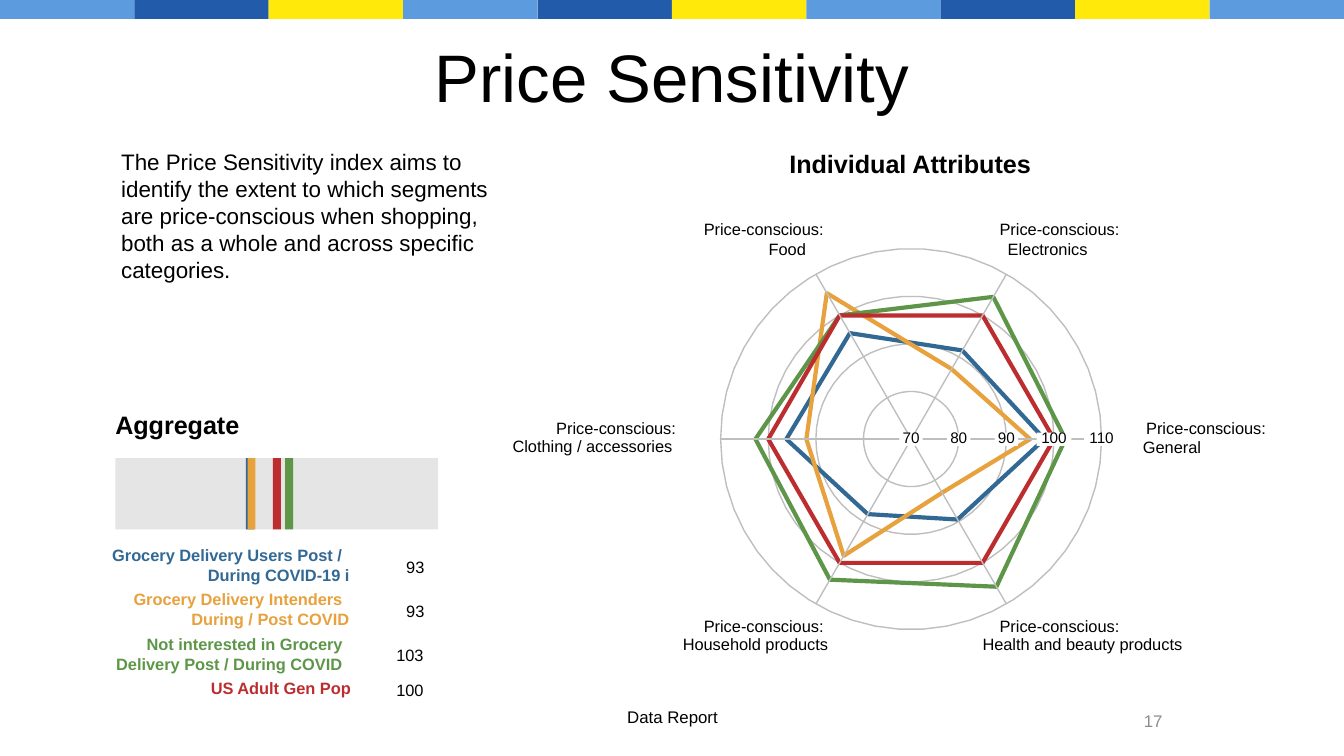
from dataclasses import dataclass
from math import cos, radians, sin

from lxml.etree import SubElement
from pptx import Presentation
from pptx.dml.color import RGBColor
from pptx.enum.shapes import MSO_CONNECTOR, MSO_SHAPE
from pptx.enum.text import MSO_ANCHOR, PP_ALIGN
from pptx.oxml.ns import qn
from pptx.util import Cm, Pt


@dataclass(frozen=True)
class Theme:
    font: str = "Arial"
    black: str = "000000"
    white: str = "FFFFFF"
    muted: str = "8C8C8C"
    grid: str = "BEBEBE"
    track: str = "E5E5E5"
    stripes: tuple = ("5B9BDE", "235BAB", "FFE90A")
    blue: str = "326994"
    orange: str = "E7A13D"
    green: str = "5D9648"
    red: str = "BC2D30"
    title: float = 36
    head: float = 13.5
    body: float = 12
    small: float = 9
    label: float = 8.8
    scale: float = 8.2


theme = Theme()
deck = Presentation()
deck.slide_width, deck.slide_height = Cm(25.4), Cm(14.29)
slide = deck.slides.add_slide(deck.slide_layouts[6])
shapes = slide.shapes


def write(text, x, y, w, h, size=theme.label, color=theme.black, bold=False,
          align=PP_ALIGN.LEFT, anchor=MSO_ANCHOR.TOP, lead=None, tight=False):
    """Add a text box; a tight one has no margins, no wrap and centered text."""
    frame = shapes.add_textbox(Cm(x), Cm(y), Cm(w), Cm(h)).text_frame
    frame.word_wrap = not tight
    if tight:
        frame.margin_left = frame.margin_right = 0
        frame.margin_top = frame.margin_bottom = 0
        align, anchor, lead = PP_ALIGN.CENTER, MSO_ANCHOR.MIDDLE, size
    frame.vertical_anchor = anchor
    line = frame.paragraphs[0]
    line.text = text
    line.alignment = align
    if lead:
        line.line_spacing = Pt(lead)
    font = line.runs[0].font
    font.name, font.size, font.bold = theme.font, Pt(size), bold
    font.color.rgb = RGBColor.from_string(color)


def block(x, y, w, h, color):
    """Add a plain filled rectangle."""
    shape = shapes.add_shape(MSO_SHAPE.RECTANGLE, Cm(x), Cm(y), Cm(w), Cm(h))
    shape.shadow.inherit = False
    shape.fill.solid()
    shape.fill.fore_color.rgb = RGBColor.from_string(color)
    shape.line.fill.background()


# Top band
for i in range(10):
    block(2.54 * i, 0, 2.54, 0.36, theme.stripes[i % 3])

# Headings and prose
write("Price Sensitivity", 1.27, 0.58, 22.86, 1.7, size=theme.title,
      align=PP_ALIGN.CENTER, anchor=MSO_ANCHOR.MIDDLE)
write("Aggregate", 1.93, 7.61, 3.94, 0.86, size=theme.head, bold=True)
write("The Price Sensitivity index aims to identify the extent to which segments "
      "are price-conscious when shopping, both as a whole and across specific "
      "categories.", 2.04, 2.68, 8.1, 3.96, size=theme.body, lead=14.4)
write("Data Report", 10.74, 13.24, 3.94, 0.64, size=theme.small,
      align=PP_ALIGN.CENTER)
write("Individual Attributes", 14.67, 2.68, 6.6, 1.42, size=theme.head, bold=True)
write("17", 18.97, 13.25, 3.25, 0.76, size=theme.small, color=theme.muted,
      align=PP_ALIGN.RIGHT, anchor=MSO_ANCHOR.MIDDLE)

# Segments: color, legend lines with widths, index, marker left,
# scores counterclockwise from General
groups = [
    (theme.blue, [("Grocery Delivery Users Post /", 5.13), ("During COVID-19 i", 3.18)],
     93, 4.65, (98, 91.5, 95.7, 96.2, 88.2, 89.5)),
    (theme.orange, [("Grocery Delivery Intenders", 4.72), ("During / Post COVID", 3.5)],
     93, 4.68, (95, 87, 105.4, 92, 98.3, 83)),
    (theme.green, [("Not interested in Grocery", 4.47), ("Delivery Post / During COVID", 5.05)],
     103, 5.39, (102.4, 104.5, 100, 102.7, 104.1, 105.8)),
    (theme.red, [("US Adult Gen Pop", 3.1)],
     100, 5.16, (100,) * 6),
]

# Aggregate strip and legend
block(2.18, 8.66, 6.1, 1.35, theme.track)
for i, (color, lines, index, left, scores) in enumerate(groups):
    block(left, 8.66, 0.15, 1.35, color)
    top = 10.37 + 0.84 * i
    for j, (text, wide) in enumerate(lines):
        write(text, 6.86 - wide, top + 0.38 * j, wide, 0.3, color=color,
              bold=True, tight=True)
    wide = 0.2 * len(str(index))
    write(str(index), 8.05 - wide, top + (0.22 if len(lines) > 1 else 0.04),
          wide, 0.3, tight=True)

# Radar: 0.9 cm for every ten points, 70 at the hub
hub_x, hub_y, step = 17.22, 8.3, 0.9
loops = [([70 + 10 * n] * 50, theme.grid, 0.75) for n in (4, 3, 2, 1)]
loops += [(scores, color, 2.25) for color, _, _, _, scores in groups]
for scores, color, width in loops:
    points = []
    for i, score in enumerate(scores):
        angle = radians(360 * i / len(scores))
        reach = (score - 70) / 10 * step
        points.append((Cm(hub_x + reach * cos(angle)), Cm(hub_y - reach * sin(angle))))
    pen = shapes.build_freeform(*points[0], scale=1.0)
    pen.add_line_segments(points[1:], close=True)
    shape = pen.convert_to_shape()
    shape.shadow.inherit = False
    shape.fill.background()
    shape.line.color.rgb = RGBColor.from_string(color)
    shape.line.width = Pt(width)

for i in range(6):
    angle = radians(60 * i)
    spoke = shapes.add_connector(
        MSO_CONNECTOR.STRAIGHT, Cm(hub_x), Cm(hub_y),
        Cm(hub_x + 4 * step * cos(angle)), Cm(hub_y - 4 * step * sin(angle)))
    spoke.line.color.rgb = RGBColor.from_string(theme.grid)
    spoke.line.width = Pt(0.75)
    SubElement(spoke._element.spPr, qn("a:effectLst"))

# Axis names: text, head left and top, tail left, top and width
for text, x, y, tail_x, tail_y, wide in [
    ("General", 21.54, 7.98, 21.54, 8.33, 1.22),
    ("Electronics", 18.77, 4.21, 18.95, 4.59, 1.7),
    ("Food", 13.18, 4.21, 14.5, 4.59, 0.76),
    ("Clothing / accessories", 10.39, 7.98, 9.5, 8.31, 3.4),
    ("Household products", 13.18, 11.71, 12.73, 12.05, 3.1),
    ("Health and beauty products", 18.77, 11.71, 18.29, 12.05, 4.34),
]:
    write("Price-conscious:", x, y, 2.51, 0.3, tight=True)
    write(text, tail_x, tail_y, wide, 0.3, tight=True)

# Scale along the General axis
for i in range(5):
    text = str(70 + 10 * i)
    wide = 0.22 * len(text)
    x = hub_x + step * i - wide / 2
    block(x, 8.18, wide, 0.25, theme.white)
    write(text, x, 8.18, wide, 0.25, size=theme.scale, tight=True)

deck.save("out.pptx")
